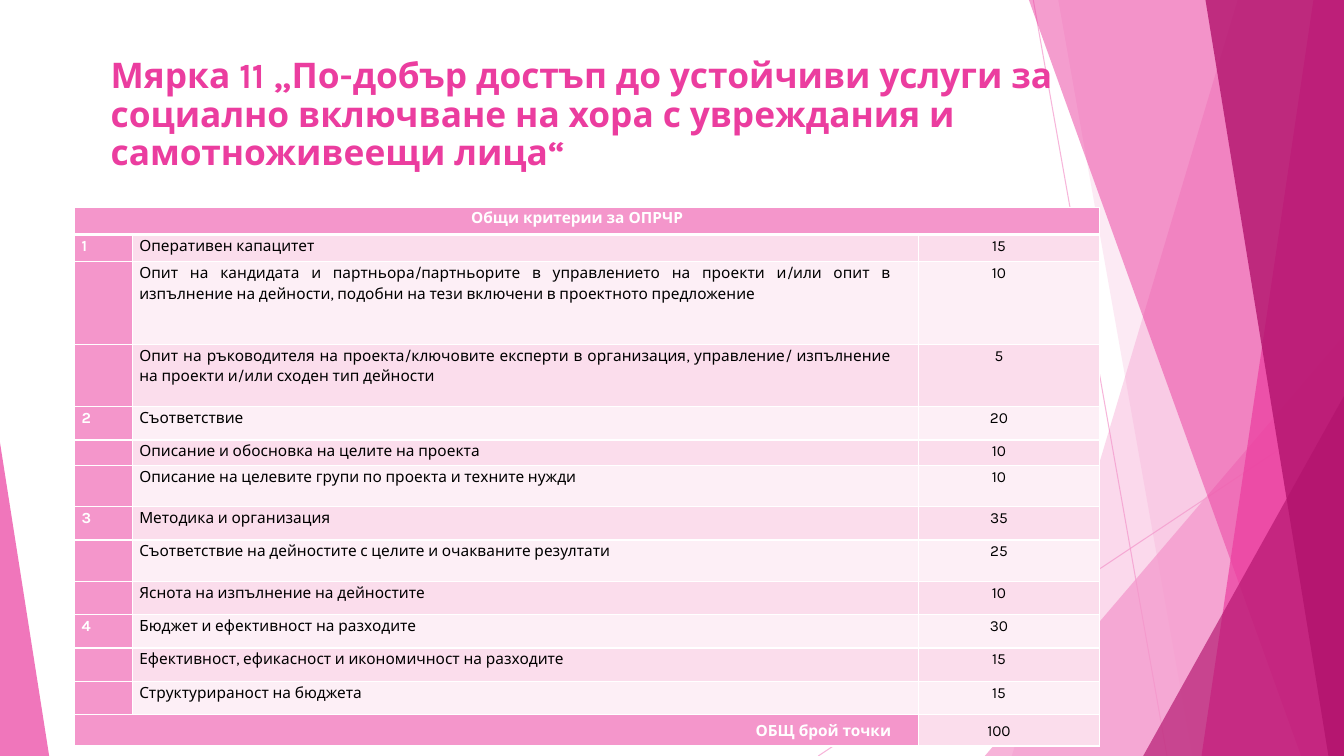
from dataclasses import dataclass

from lxml import etree
from pptx import Presentation
from pptx.dml.color import RGBColor
from pptx.enum.shapes import MSO_CONNECTOR, MSO_SHAPE
from pptx.enum.text import MSO_ANCHOR, PP_ALIGN
from pptx.oxml.ns import qn
from pptx.util import Cm, Pt

TRIANGLE = MSO_SHAPE.ISOSCELES_TRIANGLE
STRAIGHT = MSO_CONNECTOR.STRAIGHT
TOP, MIDDLE = MSO_ANCHOR.TOP, MSO_ANCHOR.MIDDLE
LEFT, CENTER, RIGHT, JUSTIFY = PP_ALIGN.LEFT, PP_ALIGN.CENTER, PP_ALIGN.RIGHT, PP_ALIGN.JUSTIFY


@dataclass(frozen=True)
class Theme:
    font: str = "Karla"
    title_size: float = 25.2
    table_size: float = 11
    light_pink: str = "F496CB"
    pink: str = "EB3D9F"
    magenta: str = "B2136D"
    odd_row: str = "FBDDEC"
    even_row: str = "FDEFF6"
    white: str = "FFFFFF"
    black: str = "000000"


THEME = Theme()
WIDTH, HEIGHT = Cm(33.87), Cm(19.05)

TITLE = ("Мярка 11 „По-добър достъп до устойчиви услуги за социално включване "
         "на хора с увреждания и самотноживеещи лица“")
HEADER = "Общи критерии за ОПРЧР"
TOTAL = ("ОБЩ брой точки", "100")
# number, criterion, points, row height in cm
CRITERIA = [
    ("1", "Оперативен капацитет", "15", 0.69),
    ("", "Опит на кандидата и партньора/партньорите в управлението на проекти и/или опит в "
         "изпълнение на дейности, подобни на тези включени в проектното предложение", "10", 2.08),
    ("", "Опит на ръководителя на проекта/ключовите експерти в организация, управление/ "
         "изпълнение на проекти и/или сходен тип дейности", "5", 1.57),
    ("2", "Съответствие", "20", 0.84),
    ("", "Описание и обосновка на целите на проекта", "10", 0.64),
    ("", "Описание на целевите групи по проекта и техните нужди", "10", 1.04),
    ("3", "Методика и организация", "35", 0.84),
    ("", "Съответствие на дейностите с целите и очакваните резултати", "25", 1.04),
    ("", "Яснота на изпълнение на дейностите", "10", 0.84),
    ("4", "Бюджет и ефективност на разходите", "30", 0.84),
    ("", "Ефективност, ефикасност и икономичност на разходите", "15", 0.84),
    ("", "Структурираност на бюджета", "15", 0.84),
]
HEADER_HEIGHT, TOTAL_HEIGHT = 0.69, 0.79
COLUMN_WIDTHS = [1.45, 19.81, 4.57]


def set_opacity(shape, percent):
    for color in shape._element.iter(qn("a:srgbClr")):
        etree.SubElement(color, qn("a:alpha"), val=str(percent * 1000))


def paint(shape, color, opacity):
    shape.shadow.inherit = False
    shape.fill.solid()
    shape.fill.fore_color.rgb = RGBColor.from_string(color)
    shape.line.fill.background()
    set_opacity(shape, opacity)


def add_thin_line(slide, start, end):
    line = slide.shapes.add_connector(STRAIGHT, *map(Cm, start + end))
    line.line.width = Pt(0.75)
    line.line.color.rgb = RGBColor.from_string(THEME.light_pink)
    set_opacity(line, 70)
    etree.SubElement(line._element.spPr, qn("a:effectLst"))


def add_wedge(slide, top_x, bottom_x, color, opacity):
    """Fill the full slide height from a slanted edge to the right side."""
    builder = slide.shapes.build_freeform(Cm(top_x), 0)
    builder.add_line_segments([(WIDTH, 0), (WIDTH, HEIGHT), (Cm(bottom_x), HEIGHT)])
    paint(builder.convert_to_shape(), color, opacity)


def add_corner(slide, left, top, width, apex, color, opacity):
    """Add a right triangle standing on the bottom edge; apex is 0 left, 1 right."""
    triangle = slide.shapes.add_shape(TRIANGLE, Cm(left), Cm(top), Cm(width), HEIGHT - Cm(top))
    triangle.adjustments[0] = apex
    paint(triangle, color, opacity)


def format_run(run, size, color, bold):
    run.font.name = THEME.font
    run.font.size = Pt(size)
    run.font.bold = bold
    run.font.color.rgb = RGBColor.from_string(color)


def add_title(slide):
    box = slide.shapes.add_textbox(Cm(2.54), Cm(1.35), Cm(25.2), Cm(3.6))
    frame = box.text_frame
    frame.word_wrap = True
    frame.vertical_anchor = TOP
    frame.text = TITLE
    paragraph = frame.paragraphs[0]
    paragraph.alignment = LEFT
    paragraph.line_spacing = 0.9
    format_run(paragraph.runs[0], THEME.title_size, THEME.pink, True)


def add_borders(cell, bottom_width):
    properties = cell._tc.get_or_add_tcPr()
    for side, width in (("L", 1), ("R", 1), ("T", 1), ("B", bottom_width)):
        border = etree.SubElement(properties, qn(f"a:ln{side}"), w=str(Pt(width)))
        fill = etree.SubElement(border, qn("a:solidFill"))
        etree.SubElement(fill, qn("a:srgbClr"), val=THEME.white)


def fill_cell(cell, text, fill, alignment, strong=False, anchor=TOP, indent=0.5, bottom_border=1):
    add_borders(cell, bottom_border)
    cell.fill.solid()
    cell.fill.fore_color.rgb = RGBColor.from_string(fill)
    cell.margin_left = cell.margin_right = Cm(0.18)
    cell.margin_top = cell.margin_bottom = 0
    cell.vertical_anchor = anchor
    paragraph = cell.text_frame.paragraphs[0]
    paragraph.text = text
    paragraph.alignment = alignment
    paragraph.line_spacing = 1.15
    paragraph._p.get_or_add_pPr().set("marR", str(Cm(indent)))
    for run in paragraph.runs:
        format_run(run, THEME.table_size, THEME.white if strong else THEME.black, strong)
    if not text:
        etree.SubElement(paragraph._p, qn("a:endParaRPr"), sz=str(int(THEME.table_size * 100)))


def add_criteria_table(slide):
    heights = [HEADER_HEIGHT, *(row[-1] for row in CRITERIA), TOTAL_HEIGHT]
    frame = slide.shapes.add_table(len(heights), len(COLUMN_WIDTHS), Cm(1.88), Cm(5.22),
                                   Cm(sum(COLUMN_WIDTHS)), Cm(sum(heights)))
    table = frame.table
    table.first_row = table.horz_banding = False
    for column, width in zip(table.columns, COLUMN_WIDTHS):
        column.width = Cm(width)
    for row, height in zip(table.rows, heights):
        row.height = Cm(height)

    table.cell(0, 0).merge(table.cell(0, 2))
    fill_cell(table.cell(0, 0), HEADER, THEME.light_pink, CENTER, strong=True, bottom_border=3)

    for index, (number, criterion, points, _) in enumerate(CRITERIA, start=1):
        band = THEME.odd_row if index % 2 else THEME.even_row
        fill_cell(table.cell(index, 0), number, THEME.light_pink, JUSTIFY, strong=True, indent=0)
        fill_cell(table.cell(index, 1), criterion, band, JUSTIFY)
        fill_cell(table.cell(index, 2), points, band, CENTER)

    last = len(heights) - 1
    label, total = TOTAL
    table.cell(last, 0).merge(table.cell(last, 1))
    fill_cell(table.cell(last, 0), label, THEME.light_pink, RIGHT, strong=True, anchor=MIDDLE)
    fill_cell(table.cell(last, 2), total, THEME.odd_row, CENTER, anchor=MIDDLE)


def add_backdrop(slide):
    add_thin_line(slide, (26.04, 0), (29.41, 19.05))
    add_thin_line(slide, (33.87, 10.24), (20.62, 19.05))
    add_wedge(slide, 31.19, 25.5, THEME.light_pink, 36)
    add_wedge(slide, 26.67, 30.05, THEME.light_pink, 20)
    add_corner(slide, 24.82, 8.46, 9.05, 1, THEME.light_pink, 72)
    add_wedge(slide, 25.93, 32.79, THEME.pink, 50)
    add_wedge(slide, 33.1, 30.28, THEME.pink, 70)
    add_wedge(slide, 30.38, 33.48, THEME.magenta, 80)
    add_corner(slide, 28.81, 9.98, 5.06, 1, THEME.magenta, 66)
    add_corner(slide, 0, 11.15, 1.24, 0, THEME.pink, 70)


def main():
    presentation = Presentation()
    presentation.slide_width, presentation.slide_height = WIDTH, HEIGHT
    slide = presentation.slides.add_slide(presentation.slide_layouts[6])
    add_backdrop(slide)
    add_title(slide)
    add_criteria_table(slide)
    presentation.save("out.pptx")


if __name__ == "__main__":
    main()
